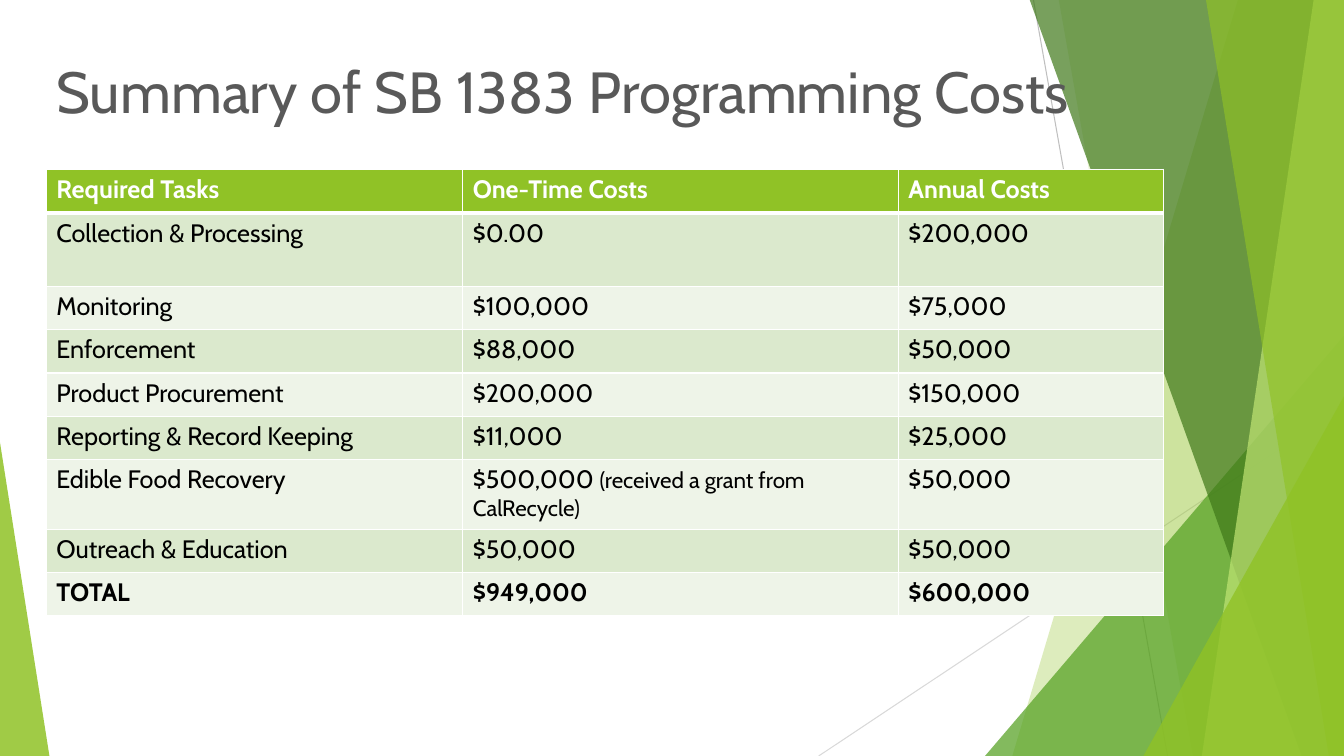
from lxml.etree import SubElement
from pptx import Presentation
from pptx.dml.color import RGBColor
from pptx.enum.shapes import MSO_CONNECTOR, MSO_SHAPE
from pptx.enum.text import MSO_ANCHOR, MSO_AUTO_SIZE, PP_ALIGN
from pptx.oxml.ns import qn
from pptx.util import Pt

PX = 9144  # EMU in one px, 100 px to the inch
WIDTH, HEIGHT = 1333, 750
FONT = "Cabin"

WHITE = RGBColor(0xFF, 0xFF, 0xFF)
BLACK = RGBColor(0x00, 0x00, 0x00)
TITLE_GREY = RGBColor(0x59, 0x59, 0x59)
LINE_GREY = RGBColor(0xBF, 0xBF, 0xBF)
PALE_GREY = RGBColor(0xD9, 0xD9, 0xD9)
LIME = RGBColor(0x90, 0xC2, 0x26)
PALE_LIME = RGBColor(0xC0, 0xE4, 0x74)
GREEN = RGBColor(0x54, 0xA0, 0x21)
DARK_GREEN = RGBColor(0x3F, 0x78, 0x19)
BAND_DARK = RGBColor(0xDB, 0xE9, 0xCD)
BAND_LIGHT = RGBColor(0xEE, 0xF4, 0xE8)

COLUMN_WIDTHS = [413, 432, 263]
ROW_HEIGHT = 43
TALL_ROWS = {1: 73, 6: 69}
GRANT_NOTE = "(received a grant from CalRecycle)"
COSTS = [
    ("Required Tasks", "One-Time Costs", "Annual Costs"),
    ("Collection & Processing", "$0.00", "$200,000"),
    ("Monitoring", "$100,000", "$75,000"),
    ("Enforcement", "$88,000", "$50,000"),
    ("Product Procurement", "$200,000", "$150,000"),
    ("Reporting & Record Keeping", "$11,000", "$25,000"),
    ("Edible Food Recovery", "$500,000 ", "$50,000"),
    ("Outreach & Education", "$50,000", "$50,000"),
    ("TOTAL", "$949,000", "$600,000"),
]


def px(*lengths):
    return [length * PX for length in lengths]


def format_run(run, size, color, bold=False):
    run.font.name = FONT
    run.font.size = Pt(size)
    run.font.bold = bold
    run.font.color.rgb = color


def add_hairline(slide, start, end, color):
    line = slide.shapes.add_connector(MSO_CONNECTOR.STRAIGHT, *px(*start, *end))
    line.line.color.rgb = color
    line.line.width = Pt(0.75)
    SubElement(line.element.spPr, qn("a:effectLst"))


def tint(shape, color, opacity):
    """Give a shape a see-through fill without outline or shadow."""
    shape.shadow.inherit = False
    shape.line.fill.background()
    shape.fill.solid()
    shape.fill.fore_color.rgb = color
    color_element = shape.element.spPr.find(qn("a:solidFill")).find(qn("a:srgbClr"))
    SubElement(color_element, qn("a:alpha"), val=str(opacity * 1000))


def add_blade(slide, top_left, bottom_left, color, opacity):
    """Add a shard that reaches from a slanted left side to the slide's right edge."""
    builder = slide.shapes.build_freeform(top_left, -1, scale=PX)
    builder.add_line_segments([(WIDTH, -1), (WIDTH, HEIGHT), (bottom_left, HEIGHT)])
    tint(builder.convert_to_shape(), color, opacity)


def add_corner(slide, left, top, width, apex, color, opacity):
    """Add a triangle that stands on the slide's bottom edge."""
    triangle = slide.shapes.add_shape(
        MSO_SHAPE.ISOSCELES_TRIANGLE, *px(left, top, width, HEIGHT - top))
    triangle.adjustments[0] = apex
    tint(triangle, color, opacity)


def add_background(slide):
    add_hairline(slide, (1025, 0), (1158, HEIGHT), LINE_GREY)
    add_hairline(slide, (WIDTH, 403), (812, HEIGHT), PALE_GREY)
    add_blade(slide, 1228, 1004, LIME, 30)
    add_blade(slide, 1050, 1183, LIME, 20)
    add_corner(slide, 977, 333, 356, 1, GREEN, 72)
    add_blade(slide, 1021, 1291, DARK_GREEN, 70)
    add_blade(slide, 1303, 1192, PALE_LIME, 70)
    add_blade(slide, 1196, 1318, LIME, 65)
    add_corner(slide, 1134, 393, 199, 1, LIME, 80)
    add_corner(slide, 0, 439, 49, 0, LIME, 85)


def place_title(slide, text):
    title = slide.shapes.title
    slide.shapes.element.append(title.element)  # in front of the background
    title.left, title.top, title.width, title.height = px(46, 27, 1150, 102)
    frame = title.text_frame
    frame.text = text
    frame.auto_size = MSO_AUTO_SIZE.NONE
    frame.vertical_anchor = MSO_ANCHOR.BOTTOM
    paragraph = frame.paragraphs[0]
    paragraph.alignment = PP_ALIGN.LEFT
    format_run(paragraph.runs[0], 41.4, TITLE_GREY)


def set_borders(cell, top, bottom):
    properties = cell._tc.get_or_add_tcPr()
    for side, width in (("L", 1), ("R", 1), ("T", top), ("B", bottom)):
        line = SubElement(properties, qn(f"a:ln{side}"), w=str(Pt(width)))
        fill = SubElement(line, qn("a:solidFill"))
        SubElement(fill, qn("a:srgbClr"), val=str(WHITE))


def fill_cell(cell, text, row):
    header, total = row == 0, row == len(COSTS) - 1
    set_borders(cell, top=3 if row == 1 else 1, bottom=3 if header else 1)
    cell.fill.solid()
    cell.fill.fore_color.rgb = LIME if header else BAND_DARK if row % 2 else BAND_LIGHT
    cell.text_frame.text = text
    run = cell.text_frame.paragraphs[0].runs[0]
    format_run(run, 18, WHITE if header else BLACK, header or total)


def add_cost_table(slide):
    heights = [TALL_ROWS.get(row, ROW_HEIGHT) for row in range(len(COSTS))]
    table = slide.shapes.add_table(
        len(COSTS), len(COLUMN_WIDTHS),
        *px(46, 168, sum(COLUMN_WIDTHS), sum(heights))).table
    table.horz_banding = False
    for column, width in zip(table.columns, COLUMN_WIDTHS):
        column.width = width * PX
    for row, (texts, height) in enumerate(zip(COSTS, heights)):
        table.rows[row].height = height * PX
        for column, text in enumerate(texts):
            fill_cell(table.cell(row, column), text, row)

    # Smaller remark behind the food recovery cost
    note = table.cell(6, 1).text_frame.paragraphs[0].add_run()
    note.text = GRANT_NOTE
    format_run(note, 16, BLACK)


def main():
    presentation = Presentation()
    presentation.slide_width, presentation.slide_height = px(WIDTH, HEIGHT)
    slide = presentation.slides.add_slide(presentation.slide_layouts[5])
    add_background(slide)
    place_title(slide, "Summary of SB 1383 Programming Costs")
    add_cost_table(slide)
    presentation.save("out.pptx")


if __name__ == "__main__":
    main()
